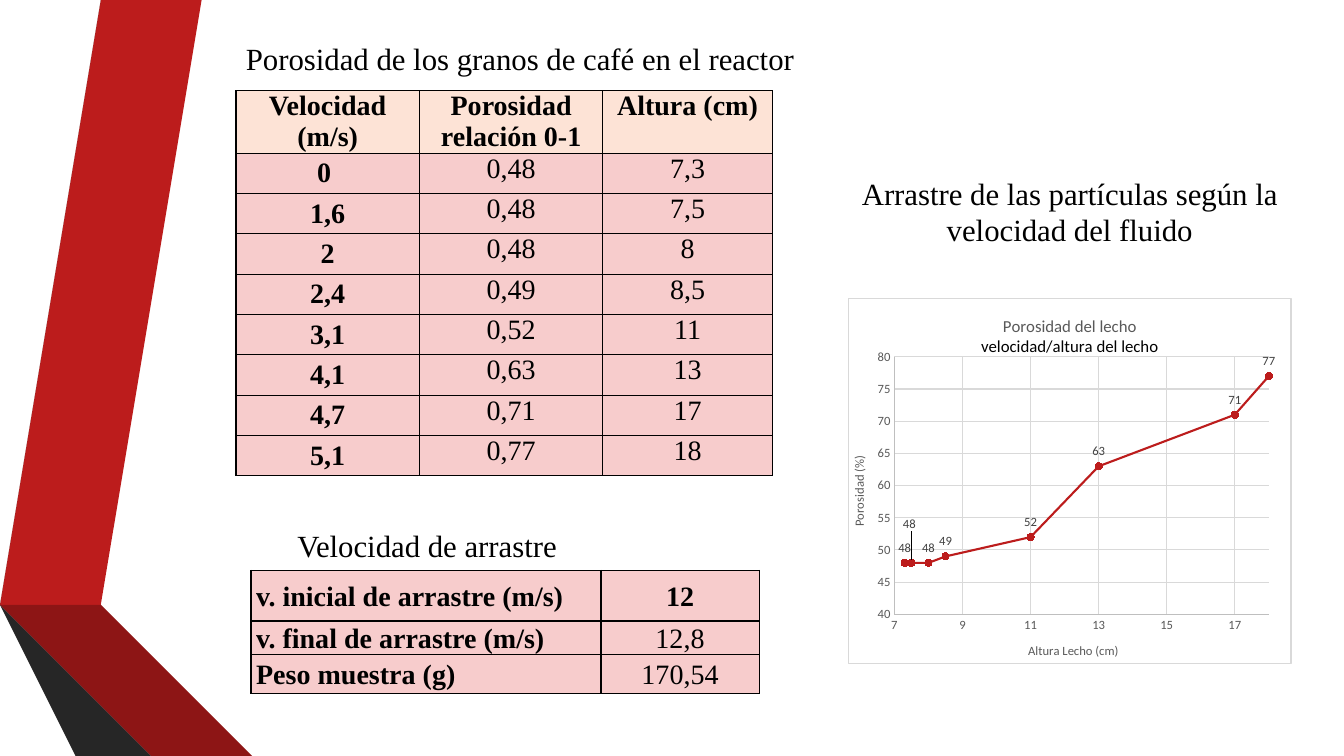
from lxml import etree
from pptx import Presentation, util as u
from pptx.chart.data import XyChartData
from pptx.dml.color import RGBColor
from pptx.enum import chart as ch, text
from pptx.oxml import parse_xml
from pptx.oxml.ns import nsdecls, qn

SERIF = "Times New Roman"
BLACK, PINK, PEACH, RED = "000000", "F7CCCC", "FDE3D6", "BC1C1C"
GREY, GRID, AXIS, LABEL = "595959", "D9D9D9", "BFBFBF", "404040"
CENTER, LEFT = text.PP_ALIGN.CENTER, text.PP_ALIGN.LEFT
MIDDLE, TOP = text.MSO_ANCHOR.MIDDLE, text.MSO_ANCHOR.TOP

RIBBONS = [
    (RED, [(0.5, 5.78), (0.77, 5.83), (1.73, 0), (1.45, 0)]),
    (GREY, [(1.39, 0), (1.11, 0), (0.16, 5.73), (0.44, 5.77)]),
    ("262626", [(0.16, 5.73), (1.45, 7.5), (1.51, 7.5)]),
    ("5E0E0E", [(0.5, 5.79), (2.08, 7.5), (2.14, 7.5)]),
    ("8D1515", [(0.5, 5.79), (2.14, 7.5), (2.83, 7.5), (0.77, 5.83), (0.5, 5.78)]),
    (LABEL, [(2.02, 7.5), (0.48, 5.83), (0.43, 5.77), (0.16, 5.73), (1.51, 7.5)]),
]
POROSITY = [
    ("Velocidad (m/s)", "Porosidad relación 0-1", "Altura (cm)"),
    ("0 ", "0,48", "7,3"),
    ("1,6", "0,48", "7,5"),
    ("2", "0,48", "8"),
    ("2,4", "0,49", "8,5"),
    ("3,1", "0,52", "11"),
    ("4,1", "0,63", "13"),
    ("4,7", "0,71", "17"),
    ("5,1", "0,77", "18"),
]
DRAG = [
    ("v. inicial de arrastre (m/s)", "12"),
    ("v. final de arrastre (m/s)", "12,8"),
    ("Peso muestra (g)", "170,54"),
]
BED = [(7.3, 48), (7.5, 48), (8, 48), (8.5, 49), (11, 52), (13, 63), (17, 71), (18, 77)]


def rgb(color):
    return RGBColor.from_string(color)


def set_attrs(obj, values):
    for name, value in values.items():
        setattr(obj, name, value)


def set_font(font, size, color, name, bold=False):
    set_attrs(font, dict(size=u.Pt(size), name=name, bold=bold))
    font.color.rgb = rgb(color)


def set_fill(obj, color):
    obj.fill.solid()
    obj.fill.fore_color.rgb = rgb(color)


def set_line(fmt, color, width):
    fmt.line.color.rgb = rgb(color)
    fmt.line.width = u.Pt(width)


def add_ribbon(s, color, points):
    builder = s.shapes.build_freeform(*points[0], scale=float(u.Inches(1)))
    builder.add_line_segments(points[1:], close=True)
    sp = builder.convert_to_shape()
    sp.shadow.inherit = False
    set_fill(sp, color)
    sp.line.fill.background()


def add_heading(s, box, words, align=LEFT, wrap=False):
    tf = s.shapes.add_textbox(*map(u.Inches, box)).text_frame
    tf.word_wrap = wrap
    p = tf.paragraphs[0]
    p.alignment = align
    r = p.add_run()
    r.text = words
    set_font(r.font, 22, BLACK, SERIF)


def add_borders(cell):
    tcPr = cell._tc.get_or_add_tcPr()
    for i, side in enumerate("LRTB"):
        tcPr.insert(i, parse_xml(
            f'<a:ln{side} {nsdecls("a")} w="12700"><a:solidFill>'
            f'<a:srgbClr val="{BLACK}"/></a:solidFill></a:ln{side}>'))


def add_grid(s, at, widths, heights, rows, style):
    """style(row, col) gives fill, bold, anchor, margin and paragraph format."""
    box = (*at, sum(widths), sum(heights))
    table = s.shapes.add_table(len(rows), len(widths), *map(u.Inches, box)).table
    set_attrs(table, dict(first_row=False, horz_banding=False))
    for column, width in zip(table.columns, widths):
        column.width = u.Inches(width)
    for i, (row, height) in enumerate(zip(rows, heights)):
        table.rows[i].height = u.Inches(height)
        for j, words in enumerate(row):
            fill, bold, anchor, margin, para = style(i, j)
            cell = table.cell(i, j)
            side = u.Inches(margin)
            set_attrs(cell, dict(margin_left=side, margin_right=side, margin_top=0,
                                 margin_bottom=0, vertical_anchor=anchor))
            p = cell.text_frame.paragraphs[0]
            set_attrs(p, para)
            r = p.add_run()
            r.text = words
            set_font(r.font, 20, BLACK, SERIF, bold)
            set_fill(cell, fill)
            add_borders(cell)


def porosity_style(i, j):
    para = dict(alignment=CENTER, space_before=u.Pt(6))
    return (PINK if i else PEACH, i == 0 or j == 0,
            MIDDLE if i and j == 0 else TOP, 0.07, para)


def drag_style(i, j):
    para = dict(alignment=CENTER if j else LEFT, line_spacing=1.07)
    return PINK, i == 0 or j == 0, MIDDLE, 0.05, para


def manual_layout(**values):
    parts = "".join(f'<c:{k} val="{v}"/>' for k, v in values.items())
    return parse_xml(f'<c:layout {nsdecls("c")}><c:manualLayout>{parts}'
                     '</c:manualLayout></c:layout>')


def set_title(tf, lines, size):
    for i, (words, color) in enumerate(lines):
        p = tf.add_paragraph() if i else tf.paragraphs[0]
        r = p.add_run()
        r.text = words
        set_font(r.font, size, color, "Calibri")


def format_axis(axis, title, low, high, step):
    set_attrs(axis, dict(minimum_scale=low, maximum_scale=high, major_unit=step,
                         has_major_gridlines=True, has_title=True,
                         major_tick_mark=ch.XL_TICK_MARK.NONE,
                         minor_tick_mark=ch.XL_TICK_MARK.NONE))
    set_line(axis.format, AXIS, 0.75)
    set_line(axis.major_gridlines.format, GRID, 0.75)
    set_font(axis.tick_labels.font, 9, GREY, "Calibri")
    set_title(axis.axis_title.text_frame, [(title, GREY)], 9)


def add_bed_chart(s, box):
    data = XyChartData()
    bed = data.add_series("Series 1")
    for x, y in BED:
        bed.add_data_point(x, y)
    chart = s.shapes.add_chart(ch.XL_CHART_TYPE.XY_SCATTER_SMOOTH,
                               *map(u.Inches, box), data).chart
    set_attrs(chart, dict(has_legend=False, has_title=True))
    set_font(chart.font, 10, BLACK, "Calibri")
    set_title(chart.chart_title.text_frame,
              [("Porosidad del lecho", GREY), ("velocidad/altura del lecho", BLACK)], 12)
    format_axis(chart.category_axis, "Altura Lecho (cm)", 7, 18, 2)
    format_axis(chart.value_axis, "Porosidad (%)", 40, 80, 5)

    # Curve, markers and value labels
    plot = chart.plots[0]
    plot.vary_by_categories = False
    series = plot.series[0]
    set_line(series.format, RED, 1.5)
    set_attrs(series.marker, dict(style=ch.XL_MARKER_STYLE.CIRCLE, size=5))
    set_fill(series.marker.format, RED)
    set_line(series.marker.format, RED, 0.75)
    for i in range(len(BED)):
        label = series.points[i].data_label
        set_font(label.font, 9, LABEL, "Calibri")
        label.position = ch.XL_LABEL_POSITION.ABOVE

    # Raise the second label clear of its neighbours
    root = chart._chartSpace
    root.xpath(".//c:dLbl")[1].insert(1, manual_layout(x=-0.005, y=-0.066))

    # Plot area place, background and frame
    area = root.find(".//" + qn("c:plotArea"))
    for old in area.findall(qn("c:layout")):
        area.remove(old)
    area.insert(0, manual_layout(layoutTarget="inner", xMode="edge", yMode="edge",
                                 x=0.104, y=0.159, w=0.846, h=0.706))
    frame = etree.fromstring(
        f'<c:spPr {nsdecls("c", "a")}><a:solidFill><a:srgbClr val="FFFFFF"/></a:solidFill>'
        f'<a:ln w="9525"><a:solidFill><a:srgbClr val="{GRID}"/></a:solidFill></a:ln></c:spPr>')
    root.find(qn("c:chart")).addnext(frame)


def main():
    prs = Presentation()
    set_attrs(prs, dict(slide_width=u.Inches(13.33), slide_height=u.Inches(7.5)))
    s = prs.slides.add_slide(prs.slide_layouts[6])

    # Folded ribbons on the left
    for color, points in RIBBONS:
        add_ribbon(s, color, points)

    # Tables
    add_grid(s, (2.34, 0.9), [1.82, 1.82, 1.68], [0.62] + [0.4] * 8,
             POROSITY, porosity_style)
    add_grid(s, (2.49, 5.66), [3.47, 1.57], [0.5, 0.33, 0.39], DRAG, drag_style)

    # Headings and chart
    add_heading(s, (2.85, 5.18, 2.88, 0.47), "Velocidad de arrastre")
    add_heading(s, (2.34, 0.35, 5.7, 0.47), "Porosidad de los granos de café en el reactor")
    add_bed_chart(s, (8.41, 2.96, 4.4, 3.63))
    add_heading(s, (8.41, 1.68, 4.4, 0.84),
                "Arrastre de las partículas según la velocidad del fluido", CENTER, True)
    prs.save("out.pptx")


if __name__ == "__main__":
    main()
